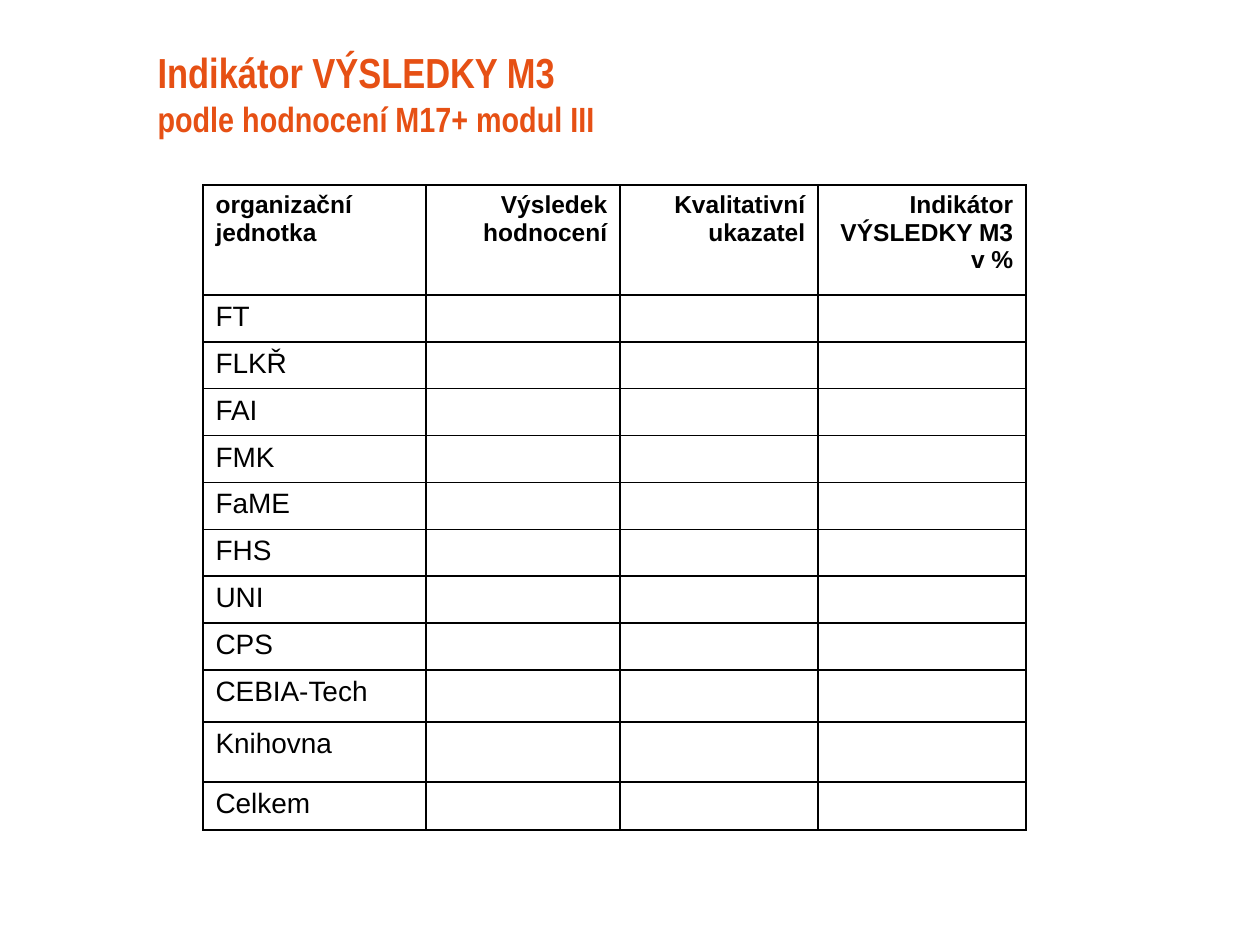
import dataclasses

import lxml.etree
import pptx
import pptx.dml.color
import pptx.enum.text
import pptx.oxml.ns
import pptx.util

SCALE = 914400 / 126
ALIGN = pptx.enum.text.PP_ALIGN


@dataclasses.dataclass(frozen=True)
class Theme:
    accent: str = "E65014"
    ink: str = "000000"
    paper: str = "FFFFFF"
    face: str = "Arial"
    narrow: str = "Arial Narrow"
    title: int = 24
    under: int = 20
    head: int = 14
    body: int = 16


@dataclasses.dataclass(frozen=True)
class Column:
    width: int
    lines: tuple[str, ...]
    align: ALIGN = ALIGN.RIGHT


@dataclasses.dataclass(frozen=True)
class Row:
    name: str
    height: int = 44


THEME = Theme()
COLUMNS = (
    Column(223, ("organizační jednotka",), ALIGN.LEFT),
    Column(194, ("Výsledek hodnocení",)),
    Column(198, ("Kvalitativní ukazatel",)),
    Column(208, ("Indikátor VÝSLEDKY M3", "v %")),
)
UNITS = ("FT", "FLKŘ", "FAI", "FMK", "FaME", "FHS", "UNI", "CPS")
ROWS = (
    *(Row(name) for name in UNITS),
    Row("CEBIA-Tech", 52),
    Row("Knihovna", 60),
    Row("Celkem", 48),
)
HEAD = 110


def px(count: int) -> int:
    return round(count * SCALE)


def write(para, text: str, *, size: int, face: str = THEME.face,
          color: str = THEME.ink, bold: bool = False,
          align: ALIGN = ALIGN.LEFT) -> None:
    para.alignment = align
    if not text:
        end = para._p.get_or_add_endParaRPr()
        end.set("sz", str(size * 100))
        return
    run = para.add_run()
    run.text = text
    font = run.font
    font.name = face
    font.size = pptx.util.Pt(size)
    font.bold = bold
    font.color.rgb = pptx.dml.color.RGBColor.from_string(color)


def border(cell) -> None:
    props = cell._tc.get_or_add_tcPr()
    for place, side in enumerate(("lnL", "lnR", "lnT", "lnB")):
        line = lxml.etree.Element(pptx.oxml.ns.qn(f"a:{side}"),
                                  w=str(pptx.util.Pt(1)))
        fill = lxml.etree.SubElement(line, pptx.oxml.ns.qn("a:solidFill"))
        lxml.etree.SubElement(fill, pptx.oxml.ns.qn("a:srgbClr"), val=THEME.ink)
        props.insert(place, line)


def fill_cell(cell, lines: tuple[str, ...], **form) -> None:
    cell.fill.solid()
    cell.fill.fore_color.rgb = pptx.dml.color.RGBColor.from_string(THEME.paper)
    border(cell)
    frame = cell.text_frame
    for place, text in enumerate(lines):
        para = frame.add_paragraph() if place else frame.paragraphs[0]
        write(para, text, **form)


def draw_title(slide) -> None:
    title = slide.shapes.title
    title.left, title.top, title.width, title.height = map(px, (145, 45, 1087, 96))
    frame = title.text_frame
    frame.word_wrap = True
    frame.auto_size = pptx.enum.text.MSO_AUTO_SIZE.NONE
    frame.vertical_anchor = pptx.enum.text.MSO_ANCHOR.MIDDLE
    para = frame.paragraphs[0]
    form = dict(face=THEME.narrow, color=THEME.accent, bold=True)
    write(para, "Indikátor VÝSLEDKY M3", size=THEME.title, **form)
    para.add_line_break()
    write(para, "podle hodnocení M17+ modul III", size=THEME.under, **form)


def draw_table(slide) -> None:
    width = sum(col.width for col in COLUMNS)
    height = HEAD + sum(row.height for row in ROWS)
    table = slide.shapes.add_table(len(ROWS) + 1, len(COLUMNS), px(203), px(185),
                                   px(width), px(height)).table
    table.first_row = table.horz_banding = False
    table.rows[0].height = px(HEAD)
    for x, col in enumerate(COLUMNS):
        table.columns[x].width = px(col.width)
        fill_cell(table.cell(0, x), col.lines, size=THEME.head, bold=True,
                  align=col.align)
    for y, row in enumerate(ROWS, 1):
        table.rows[y].height = px(row.height)
        for x, col in enumerate(COLUMNS):
            text = "" if x else row.name
            fill_cell(table.cell(y, x), (text,), size=THEME.body, align=col.align)


def main() -> None:
    deck = pptx.Presentation()
    deck.slide_width, deck.slide_height = px(1260), px(945)
    slide = deck.slides.add_slide(deck.slide_layouts[5])
    draw_title(slide)
    draw_table(slide)
    deck.save("out.pptx")


if __name__ == "__main__":
    main()
